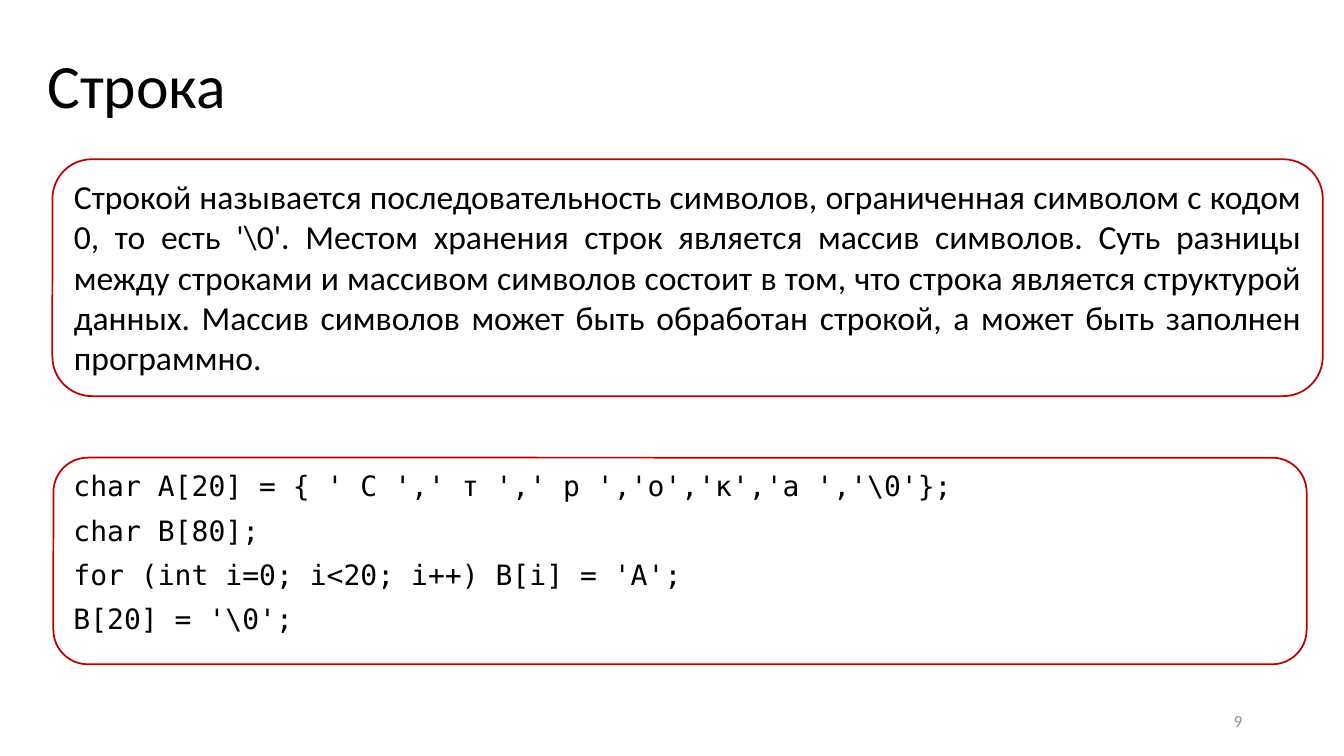
from pptx import Presentation
from pptx.dml.color import RGBColor
from pptx.enum.shapes import MSO_SHAPE as Shape
from pptx.enum.text import MSO_ANCHOR as Anchor, PP_ALIGN as Align
from pptx.util import Inches, Pt

BLACK = RGBColor(0x00, 0x00, 0x00)
GREY = RGBColor(0x8C, 0x8C, 0x8C)
RED = RGBColor(0xC0, 0x00, 0x00)

RULE = (
    r"Строкой называется последовательность символов, ограниченная символом "
    r"с кодом 0, то есть '\0'. Местом хранения строк является массив символов. "
    r"Суть разницы между строками и массивом символов состоит в том, что строка "
    r"является структурой данных. Массив символов может быть обработан строкой, "
    r"а может быть заполнен программно."
)
CODE = [
    r"char A[20] = { ' С ',' т ',' р ','о','к','а ','\0'};",
    r"char B[80];",
    r"for (int i=0; i<20; i++) B[i] = 'A';",
    r"В[20] = '\0';",
]


def write(shape, lines, size, font="Calibri", color=BLACK, align=Align.LEFT,
          anchor=Anchor.MIDDLE, pitch=None, before=0):
    frame = shape.text_frame
    frame.word_wrap = True
    frame.vertical_anchor = anchor
    frame.text = "\n".join(lines)
    for para in frame.paragraphs:
        para.alignment = align
        para.line_spacing = pitch
        para.space_before = Pt(before)
        para.font.name = font
        para.font.size = Pt(size)
        para.font.color.rgb = color


def frame_box(left, top, width, height):
    """Add a rounded box with a red outline and no fill."""
    box = slide.shapes.add_shape(Shape.ROUNDED_RECTANGLE, Inches(left),
                                 Inches(top), Inches(width), Inches(height))
    box.shadow.inherit = False
    box.fill.background()
    box.line.color.rgb = RED
    box.line.width = Pt(1.25)
    return box


deck = Presentation()
deck.slide_width = Inches(13.33)
deck.slide_height = Inches(7.5)
slide = deck.slides.add_slide(deck.slide_layouts[6])

title = slide.shapes.add_textbox(Inches(0.37), Inches(0.15),
                                 Inches(11.5), Inches(1.45))
write(title, ["Строка"], 44, pitch=0.9)

code = frame_box(0.53, 4.54, 12.43, 2.05)
write(code, CODE, 20, font="DejaVu Sans Mono", anchor=Anchor.TOP,
      pitch=0.9, before=10)

number = slide.shapes.add_textbox(Inches(9.42), Inches(6.95),
                                  Inches(3), Inches(0.4))
write(number, ["9"], 12, color=GREY, align=Align.RIGHT)

rule = frame_box(0.52, 1.58, 12.6, 2.35)
write(rule, [RULE], 24, align=Align.JUSTIFY, anchor=Anchor.TOP)

deck.save("out.pptx")
